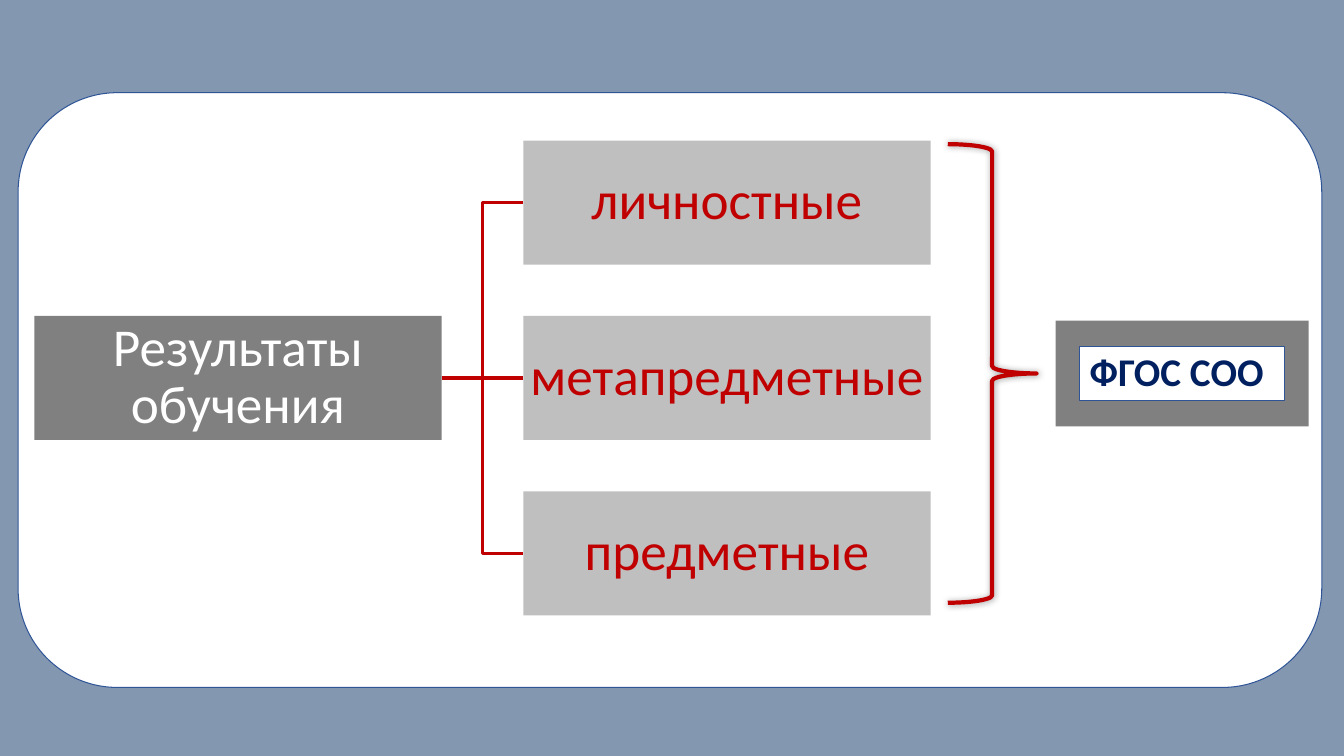
"""Build a slide that ties the kinds of learning results to the standard."""
from lxml import etree
from pptx import Presentation
from pptx import util as u
from pptx.dml.color import RGBColor
from pptx.enum import shapes, text
from pptx.oxml.ns import qn

ROOT = "Результаты обучения"
KINDS = ["личностные", "метапредметные", "предметные"]
STANDARD = "ФГОС СОО"
COLORS = {"back": "8497B0", "white": "FFFFFF", "edge": "2F5597", "dark": "808080",
          "light": "BFBFBF", "red": "C00000", "navy": "002060", "black": "000000"}
FONT = "Calibri"
W, H = 13.33, 7.5
BOX_W, BOX_H = 4.04, 1.23
ROOT_X, KIND_X = 0.34, 5.19
MID_Y, STEP = 3.75, 1.74
LINK_WIDTH = 2.25
PANEL = (0.18, 0.92, 12.93, 5.9)
BRACE = (9.4, 1.43, 0.88, 4.55)
PLATE = (10.47, 3.18, 2.51, 1.05)
LABEL = (10.71, 3.44, 2.03, 0.53)

prs = Presentation()
prs.slide_width, prs.slide_height = u.Inches(W), u.Inches(H)
s = prs.slides.add_slide(prs.slide_layouts[6])


def rgb(name):
    """Return the named colour."""
    return RGBColor.from_string(COLORS[name])


def style(sp, fill=None, line=None, width=0.75):
    """Set the fill and line of a shape and drop its shadow."""
    sp.shadow.inherit = False
    if fill:
        sp.fill.solid()
        sp.fill.fore_color.rgb = rgb(fill)
    else:
        sp.fill.background()
    if line:
        sp.line.color.rgb = rgb(line)
        sp.line.width = u.Pt(width)
    else:
        sp.line.fill.background()


def add(kind, area, **look):
    """Add a preset shape over an area given in inches."""
    sp = s.shapes.add_shape(kind, *map(u.Inches, area))
    style(sp, **look)
    return sp


def write(sp, words, size=38, color="red", bold=False, align="CENTER", inset=0.03):
    """Write one formatted paragraph in a shape."""
    tf = sp.text_frame
    tf.word_wrap = True
    tf.vertical_anchor = text.MSO_ANCHOR.MIDDLE
    tf.margin_left = tf.margin_right = u.Inches(inset)
    tf.margin_top = tf.margin_bottom = u.Inches(0.03)
    p = tf.paragraphs[0]
    p.alignment = text.PP_ALIGN[align]
    p.line_spacing = 0.9
    r = p.add_run()
    r.text = words
    r.font.name, r.font.size, r.font.bold = FONT, u.Pt(size), bold
    r.font.color.rgb = rgb(color)


def link(y):
    """Draw the line from the root box to a box centred at y."""
    start, end = u.Inches(ROOT_X + BOX_W), u.Inches(KIND_X)
    mid, goal, bend = u.Inches(MID_Y), u.Inches(y), (start + end) // 2
    if goal == mid:
        sp = s.shapes.add_connector(shapes.MSO_CONNECTOR.STRAIGHT, start, mid, end, mid)
        sp.line.color.rgb = rgb("red")
        sp.line.width = u.Pt(LINK_WIDTH)
        etree.SubElement(sp._element.spPr, qn("a:effectLst"))
    else:
        outline = s.shapes.build_freeform(start, mid)
        outline.add_line_segments([(bend, mid), (bend, goal), (end, goal)], close=False)
        style(outline.convert_to_shape(), line="red", width=LINK_WIDTH)


def soften(sp):
    """Give a shape a soft shadow."""
    effects = sp._element.spPr.find(qn("a:effectLst"))
    shadow = etree.SubElement(effects, qn("a:outerShdw"), blurRad="63500",
                              dist="0", dir="0", algn="ctr", rotWithShape="0")
    tint = etree.SubElement(shadow, qn("a:srgbClr"), val=COLORS["black"])
    etree.SubElement(tint, qn("a:alpha"), val="40000")


s.background.fill.solid()
s.background.fill.fore_color.rgb = rgb("back")
rect = shapes.MSO_SHAPE.RECTANGLE
add(shapes.MSO_SHAPE.ROUNDED_RECTANGLE, PANEL, fill="white", line="edge")
add(rect, PLATE, fill="dark")

centers = [MID_Y + (i - 1) * STEP for i in range(len(KINDS))]
for y in centers:
    link(y)
half = BOX_H / 2
write(add(rect, (ROOT_X, MID_Y - half, BOX_W, BOX_H), fill="dark"), ROOT, color="white")
for kind, y in zip(KINDS, centers):
    write(add(rect, (KIND_X, y - half, BOX_W, BOX_H), fill="light"), kind)

soften(add(shapes.MSO_SHAPE.RIGHT_BRACE, BRACE, line="red", width=3))
write(add(rect, LABEL, fill="white", line="edge"), STANDARD,
      size=28, color="navy", bold=True, align="LEFT", inset=0.1)
prs.save("out.pptx")
